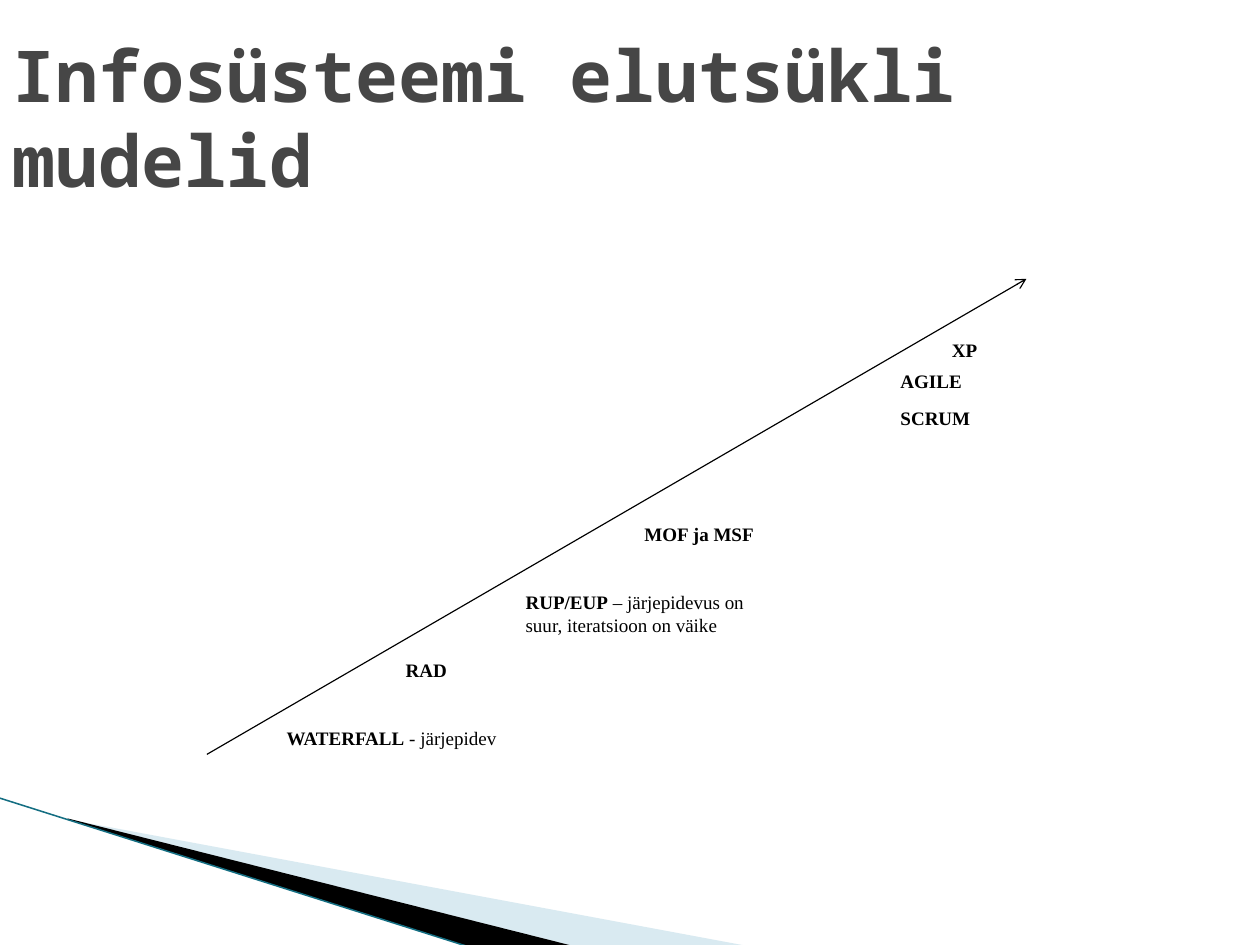
from pptx import Presentation, util as u
from pptx.dml.color import RGBColor
from pptx.enum import shapes, text
from pptx.oxml.ns import qn
from lxml import etree

WIDE, HIGH = u.Cm(28), u.Cm(21)
ROW = 0.39  # height of a one-line label

# left, top, width, height (from the chart's corner), bold name, plain rest
MODELS = [
    (0.6, 3.87, 2.84, ROW, "WATERFALL", " - järjepidev"),
    (2.69, 2.68, 2.39, 0.89, "RUP/EUP",
     " – järjepidevus on suur, iteratsioon on väike"),
    (5.97, 1.07, 1.04, ROW, "SCRUM", ""),
    (6.42, 0.47, 0.6, ROW, "XP", ""),
    (1.64, 3.27, 0.75, ROW, "RAD", ""),
    (3.73, 2.08, 1.49, ROW, "MOF ja MSF", ""),
    (5.97, 0.74, 0.9, ROW, "AGILE", ""),
]


def color(code):
    return RGBColor.from_string(code)


def paint(shape, fill, edge=None):
    shape.shadow.inherit = False
    shape.fill.solid()
    shape.fill.fore_color.rgb = color(fill)
    if edge:
        shape.line.color.rgb = color(edge)
        shape.line.width = u.Pt(0.75)
    else:
        shape.line.fill.background()


def stroke(slide, start, end, code, width):
    line = slide.shapes.add_connector(
        shapes.MSO_CONNECTOR.STRAIGHT, *map(u.Inches, start + end))
    line.line.color.rgb = color(code)
    line.line.width = u.Pt(width)
    etree.SubElement(line._element.spPr, qn("a:effectLst"))
    return line


def wedge(slide, points, code):
    # The pen keeps whole units only, so it draws in hundredths of an inch
    dots = [(round(x * 100), round(y * 100)) for x, y in points]
    pen = slide.shapes.build_freeform(*dots[0], scale=u.Inches(0.01))
    pen.add_line_segments(dots[1:], close=True)
    shape = pen.convert_to_shape()
    paint(shape, code)
    return shape


def corner(slide, left, top, width, height):
    """Wedges that fan out from one tip to the bottom edge."""
    base = top + height
    tip = (left + 0.6, top + 0.19)
    mid = (left + 5.03, base)
    pale = wedge(slide, [tip, (left + width, base), mid], "A0CBDC")
    tint = pale.fill._xPr.find(".//" + qn("a:srgbClr"))
    etree.SubElement(tint, qn("a:alpha")).set("val", "40000")
    wedge(slide, [(left + 0.59, top + 0.18), mid, (left + 4.1, base), tip],
          "000000")
    stroke(slide, (left - 0.01, top), (left + 4.09, base), "146E82", 0.95)


def title(slide, left, top, width, height):
    box = slide.shapes.add_textbox(*map(u.Inches, (left, top, width, height)))
    frame = box.text_frame
    frame.word_wrap = True
    frame.vertical_anchor = text.MSO_ANCHOR.MIDDLE
    frame.margin_left = frame.margin_right = u.Inches(0.11)
    frame.margin_top = frame.margin_bottom = u.Inches(0.06)
    para = frame.paragraphs[0]
    para.text = "Infosüsteemi elutsükli mudelid"
    font = para.font
    font.name, font.size, font.bold = "Noto Sans Mono", u.Pt(45), True
    font.color.rgb = color("464646")


def label(slide, left, top, width, height, name, rest):
    box = slide.shapes.add_shape(
        shapes.MSO_SHAPE.RECTANGLE, *map(u.Inches, (left, top, width, height)))
    paint(box, "FFFFFF", "FFFFFF")
    frame = box.text_frame
    frame.word_wrap = True
    frame.vertical_anchor = text.MSO_ANCHOR.TOP
    para = frame.paragraphs[0]
    para.alignment = text.PP_ALIGN.LEFT
    font = para.font
    font.name, font.size = "Times New Roman", u.Pt(12)
    font.color.rgb = color("000000")
    for words, bold in ((name, True), (rest, False)):
        if words:
            run = para.add_run()
            run.text, run.font.bold = words, bold


def chart(slide, left, top, width, height):
    """Rising arrow with the models placed along it."""
    arrow = stroke(slide, (left, top + height), (left + width, top),
                   "000000", 0.75)
    tail = etree.SubElement(arrow.line._get_or_add_ln(), qn("a:tailEnd"))
    tail.set("type", "arrow")
    for x, y, wide, high, name, rest in MODELS:
        label(slide, left + x, top + y, wide, high, name, rest)


def main():
    deck = Presentation()
    deck.slide_width, deck.slide_height = WIDE, HIGH
    slide = deck.slides.add_slide(deck.slide_layouts[6])
    corner(slide, 0, 6.98, 6.56, 1.3)
    title(slide, 0, 0.33, 0.9 * WIDE.inches, HIGH.inches / 6)
    chart(slide, 1.81, 2.44, 7.17, 4.16)
    deck.save("out.pptx")


if __name__ == "__main__":
    main()
